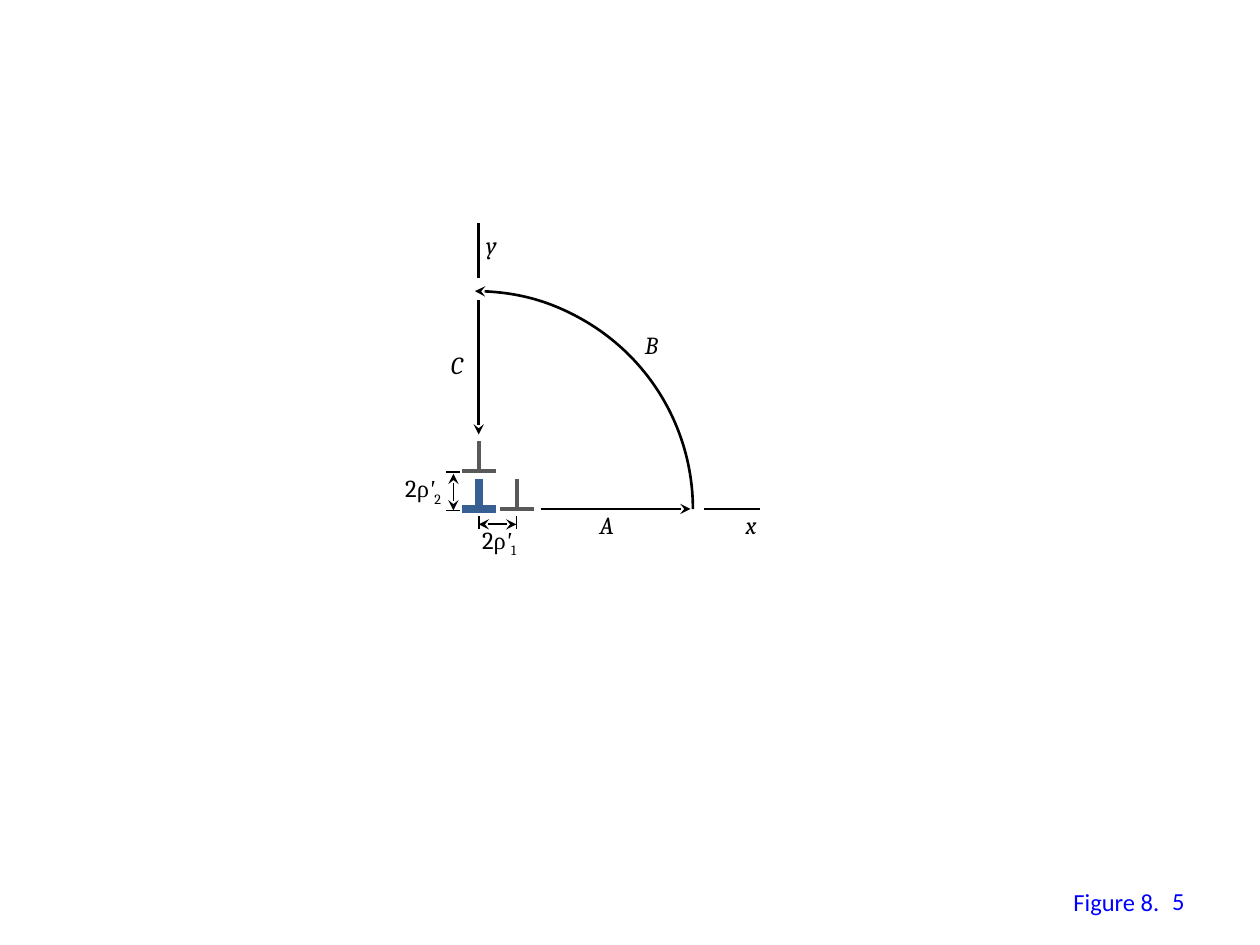
from lxml import etree
from pptx import Presentation, util as u
from pptx.dml.color import RGBColor
from pptx.enum import shapes, text
from pptx.oxml import ns

BLACK, BLUE, GREY, LABEL = "000000", "376092", "595959", "0000FF"
SERIF, GREEK, SANS = "Cambria", "Times New Roman", "Calibri"

prs = Presentation()
prs.slide_width, prs.slide_height = u.Cm(25.4), u.Cm(19.05)
s = prs.slides.add_slide(prs.slide_layouts[6])


def stroke(sp, color, width, ends=()):
    """Style an outline; ends names the arrowheads, headEnd before tailEnd."""
    sp.line.color.rgb = RGBColor.from_string(color)
    sp.line.width = u.Pt(width)
    for end in ends:
        etree.SubElement(sp.line._get_or_add_ln(), ns.qn("a:" + end), type="stealth")


def add_text(x, y, w, h, runs, color=BLACK):
    """Add a one-line 14 pt text box; runs are (text, font, italic, subscript)."""
    sp = s.shapes.add_textbox(u.Cm(x), u.Cm(y), u.Cm(w), u.Cm(h))
    tf = sp.text_frame
    tf.word_wrap = False
    tf.auto_size = text.MSO_AUTO_SIZE.SHAPE_TO_FIT_TEXT
    for words, font, italic, subscript in runs:
        r = tf.paragraphs[0].add_run()
        r.text = words
        r.font.name, r.font.size, r.font.italic = font, u.Pt(14), italic
        r.font.color.rgb = RGBColor.from_string(color)
        if subscript:
            r._r.get_or_add_rPr().set("baseline", "-25000")
    return tf


# The origin of the axes is the blue dislocation
ox, oy = 9.65, 10.26
tail, both = ["tailEnd"], ["headEnd", "tailEnd"]

lines = [
    # axes
    (15.32, oy, 14.2, oy, BLACK, 1.5, ()),
    (ox, 4.5, ox, 5.61, BLACK, 1.5, ()),
    # paths A and C
    (10.9, oy, 13.92, oy, BLACK, 1.5, tail),
    (ox, 6.05, ox, 8.76, BLACK, 1.5, tail),
    # spacing arrows
    (ox, 10.57, 10.41, 10.57, BLACK, 1, both),
    (9.14, 10.29, 9.14, 9.55, BLACK, 1, both),
]
# Spacing ticks
lines += [(x, 10.41, x, 10.67, BLACK, 1, ()) for x in (ox, 10.41)]
lines += [(8.99, y, 9.27, y, BLACK, 1, ()) for y in (9.52, 10.29)]
# Dislocations: a slip plane and an upright half plane
for x, y, color, width in [(ox, oy, BLUE, 4.5), (10.42, oy, GREY, 2.25), (ox, 9.5, GREY, 2.25)]:
    lines.append((x - 0.34, y, x + 0.34, y, color, width, ()))
    lines.append((x, y, x, y - 0.61, color, width, ()))

for x1, y1, x2, y2, color, width, ends in lines:
    c = s.shapes.add_connector(
        shapes.MSO_CONNECTOR.STRAIGHT, u.Cm(x1), u.Cm(y1), u.Cm(x2), u.Cm(y2))
    stroke(c, color, width, ends)
    etree.SubElement(c._element.spPr, ns.qn("a:effectLst"))

# Path B
arc = s.shapes.add_shape(shapes.MSO_SHAPE.ARC, u.Cm(5.18), u.Cm(5.87), u.Cm(8.79), u.Cm(8.79))
arc.shadow.inherit = False
arc.fill.background()
stroke(arc, BLACK, 1.5, ["headEnd"])

for letter, x, y, w in [("x", 14.78, 10.16, 0.86), ("y", 9.55, 4.52, 0.86), ("A", 11.84, 10.16, 0.94),
                        ("B", 12.75, 6.53, 0.94), ("C", 8.84, 6.93, 0.99)]:
    add_text(x, y, w, 0.86, [(letter, SERIF, True, False)])

for index, x, y in [("2", 7.92, 9.42), ("1", 9.47, 10.46)]:
    add_text(x, y, 1.3, 0.86, [("2", SERIF, False, False), ("ρ", GREEK, False, False),
                               ("'", GREEK, True, False), (index, SERIF, False, True)])

# Figure number
add_text(21.39, 17.75, 2.26, 0.86, [("Figure 8.", SANS, False, False)], LABEL)
tf = add_text(18.21, 17.65, 5.92, 1.02, [("5", SANS, False, False)], LABEL)
tf.auto_size = text.MSO_AUTO_SIZE.NONE
tf.word_wrap = True
tf.vertical_anchor = text.MSO_ANCHOR.MIDDLE
tf.paragraphs[0].alignment = text.PP_ALIGN.RIGHT

prs.save("out.pptx")
